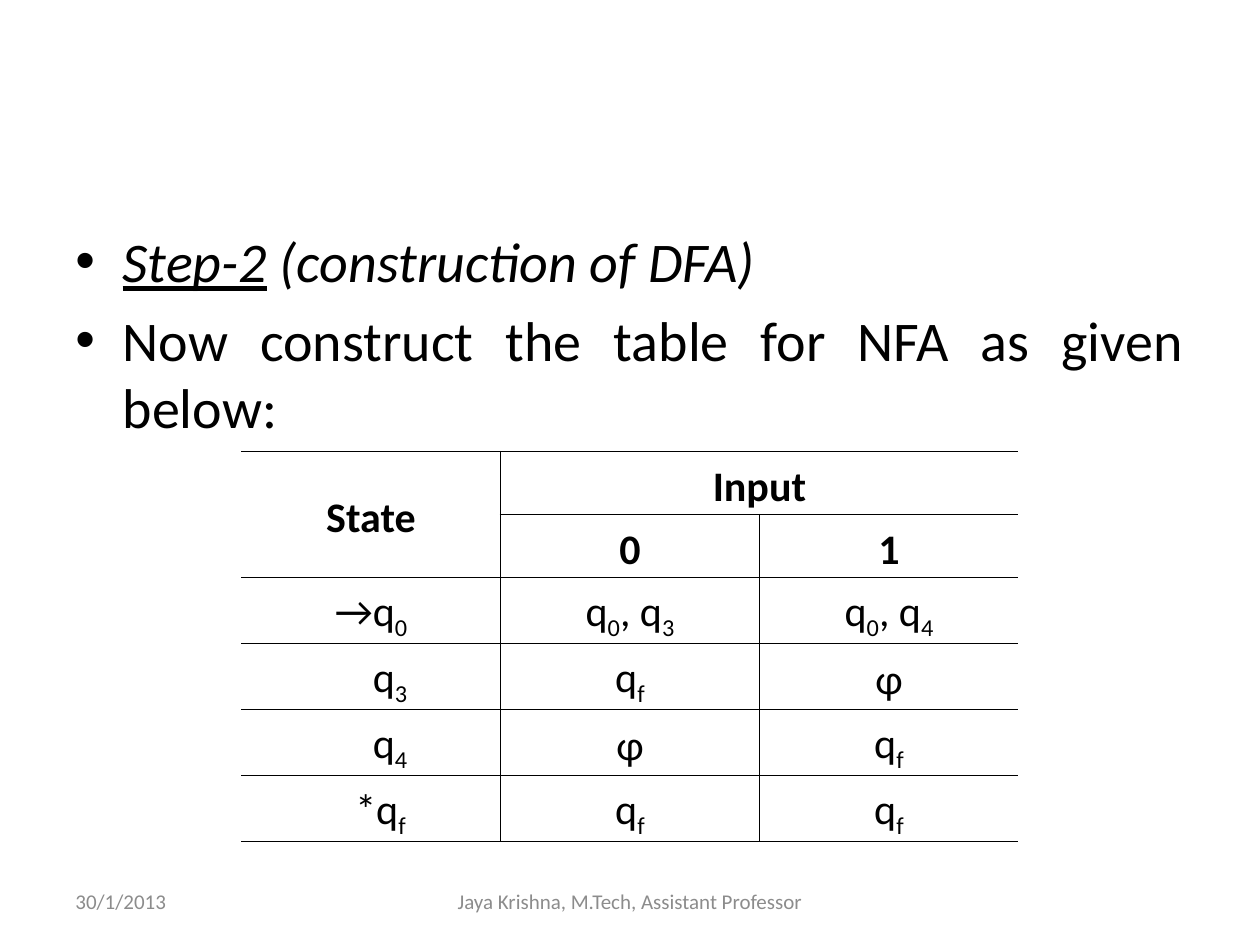
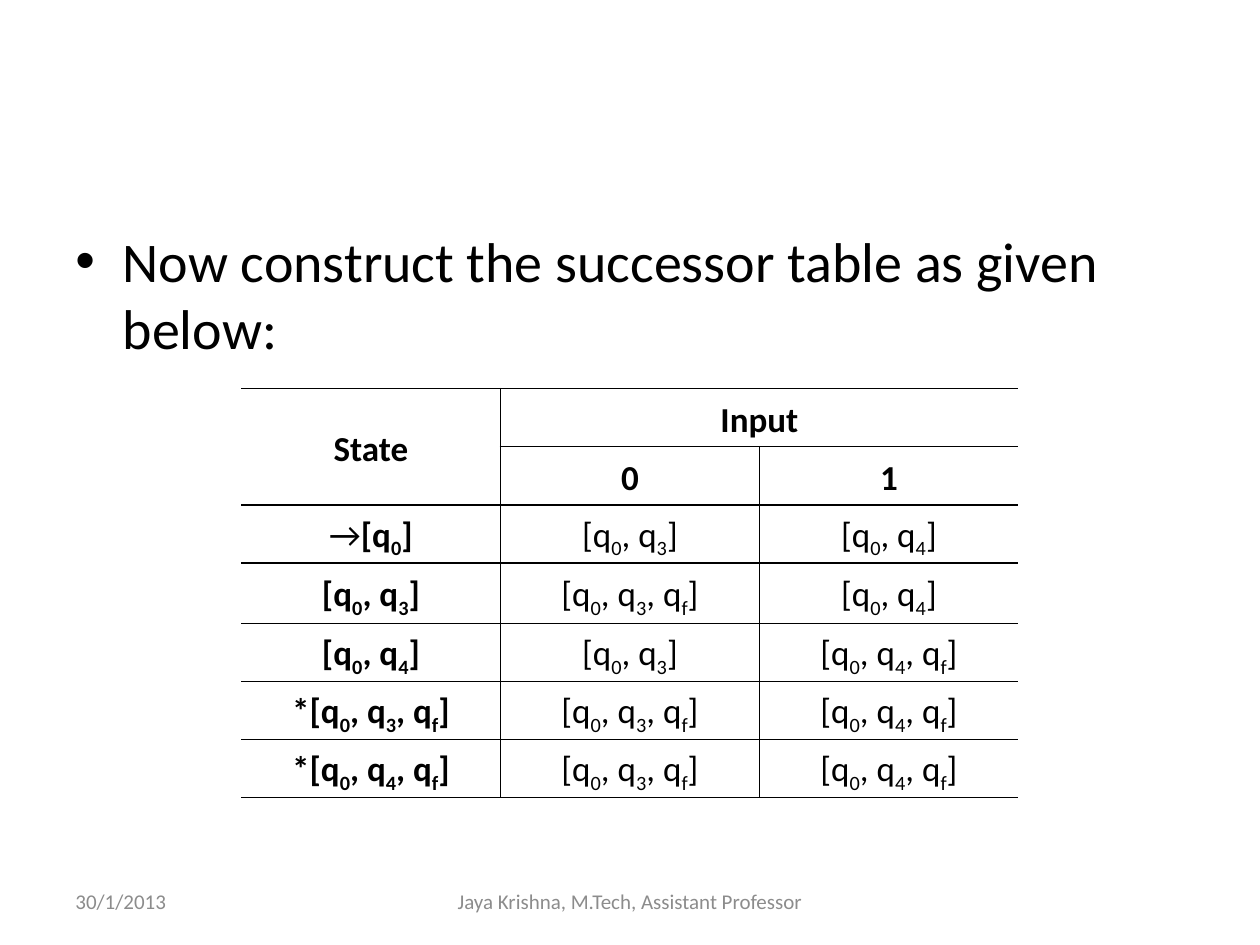
"""Build two slides showing an NFA table and its successor table."""
import dataclasses

import pptx
import pptx.dml.color
import pptx.enum.text
import pptx.oxml.ns
import pptx.util
from lxml import etree

Pt = pptx.util.Pt
ALIGN = pptx.enum.text.PP_ALIGN
MIDDLE = pptx.enum.text.MSO_ANCHOR.MIDDLE


@dataclasses.dataclass(frozen=True)
class Theme:
    font: str = "Calibri"
    ink: str = "000000"
    muted: str = "8C8C8C"
    body_size: float = 32
    footer_size: float = 12
    border: float = 1
    bullet_indent: float = 27


THEME = Theme()
SLIDE_SIZE = (720, 540)
BODY_LEFT, BODY_TOP, BODY_WIDTH = 36, 126, 648
TABLE_LEFT, COLUMN_WIDTH = 138, 148

FOOTERS = [
    ("30/1/2013", (36, 500.5, 168, 28.75), ALIGN.LEFT),
    ("Jaya Krishna, M.Tech, Assistant Professor", (246, 500.5, 228, 28.75), ALIGN.CENTER),
]
HEADER = [("State", "Input", ""), ("", "0", "1")]
SLIDES = [
    {
        "body_height": 131.75,
        "bullets": [
            (ALIGN.LEFT, [("Step-2", {"italic": True, "underline": True}),
                          (" (construction of DFA)", {"italic": True})]),
            (ALIGN.JUSTIFY, [("Now construct the table for NFA as given below:", {})]),
        ],
        "table_top": 258,
        "text_size": 24,
        "bold_states": False,
        "row_heights": [36] * 6,
        "state_indents": {3: 21.7, 4: 21.7, 5: 10.85},
        "rows": [
            ("→q_0", "q_0, q_3", "q_0, q_4"),
            ("q_3", "q_f", "φ"),
            ("q_4", "φ", "q_f"),
            ("*q_f", "q_f", "q_f"),
        ],
    },
    {
        "body_height": 77.75,
        "bullets": [
            (ALIGN.LEFT, [("Now construct the successor table as given below:", {})]),
        ],
        "table_top": 222,
        "text_size": 20,
        "bold_states": True,
        "row_heights": [33.25] * 3 + [34.5] + [33.25] * 3,
        "state_indents": {},
        "rows": [
            ("→[q_0]", "[q_0, q_3]", "[q_0, q_4]"),
            ("[q_0, q_3]", "[q_0, q_3, q_f]", "[q_0, q_4]"),
            ("[q_0, q_4]", "[q_0, q_3]", "[q_0, q_4, q_f]"),
            ("*[q_0, q_3, q_f]", "[q_0, q_3, q_f]", "[q_0, q_4, q_f]"),
            ("*[q_0, q_4, q_f]", "[q_0, q_3, q_f]", "[q_0, q_4, q_f]"),
        ],
    },
]


def add_run(paragraph, text, size, color=THEME.ink, bold=False, italic=False,
            underline=False, subscript=False):
    run = paragraph.add_run()
    run.text = text
    font = run.font
    font.name, font.size = THEME.font, Pt(size)
    font.bold, font.italic, font.underline = bold, italic, underline
    font.color.rgb = pptx.dml.color.RGBColor.from_string(color)
    if subscript:
        run._r.get_or_add_rPr().set("baseline", "-25000")


def add_state_runs(paragraph, text, size, bold):
    if text.startswith("→"):
        add_run(paragraph, "→", size)
        text = text[1:]
    first, *subscripted = text.split("_")
    add_run(paragraph, first, size, bold=bold)
    for part in subscripted:
        add_run(paragraph, part[0], size, bold=bold, subscript=True)
        if part[1:]:
            add_run(paragraph, part[1:], size, bold=bold)


def add_text_box(slide, box):
    frame = slide.shapes.add_textbox(*map(Pt, box)).text_frame
    frame.word_wrap = True
    return frame


def add_bullets(slide, content):
    frame = add_text_box(slide, (BODY_LEFT, BODY_TOP, BODY_WIDTH, content["body_height"]))
    for index, (alignment, runs) in enumerate(content["bullets"]):
        paragraph = frame.add_paragraph() if index else frame.paragraphs[0]
        paragraph.alignment = alignment
        paragraph.space_before = Pt(THEME.body_size * 0.2)
        properties = paragraph._p.get_or_add_pPr()
        properties.set("marL", str(Pt(THEME.bullet_indent)))
        properties.set("indent", str(-Pt(THEME.bullet_indent)))
        bullet_font = etree.SubElement(properties, pptx.oxml.ns.qn("a:buFont"))
        bullet_font.set("typeface", "Arial")
        etree.SubElement(properties, pptx.oxml.ns.qn("a:buChar")).set("char", "•")
        for text, style in runs:
            add_run(paragraph, text, THEME.body_size, **style)


def add_footers(slide):
    for text, box, alignment in FOOTERS:
        frame = add_text_box(slide, box)
        frame.vertical_anchor = MIDDLE
        frame.paragraphs[0].alignment = alignment
        add_run(frame.paragraphs[0], text, THEME.footer_size, THEME.muted)


def has_vertical_line(row, boundary):
    return boundary == 1 or (boundary == 2 and row > 0)


def has_horizontal_line(boundary, column):
    return boundary != 1 or column > 0


def set_borders(cell, row, column):
    properties = cell._tc.get_or_add_tcPr()
    sides = {
        "a:lnL": has_vertical_line(row, column),
        "a:lnR": has_vertical_line(row, column + 1),
        "a:lnT": has_horizontal_line(row, column),
        "a:lnB": has_horizontal_line(row + 1, column),
    }
    for tag, visible in sides.items():
        line = etree.SubElement(properties, pptx.oxml.ns.qn(tag))
        line.set("w", str(Pt(THEME.border)))
        fill = etree.SubElement(line, pptx.oxml.ns.qn("a:solidFill" if visible else "a:noFill"))
        if visible:
            etree.SubElement(fill, pptx.oxml.ns.qn("a:srgbClr")).set("val", THEME.ink)


def add_state_table(slide, content):
    rows = HEADER + content["rows"]
    heights = content["row_heights"]
    table = slide.shapes.add_table(
        len(rows), 3, Pt(TABLE_LEFT), Pt(content["table_top"]),
        Pt(3 * COLUMN_WIDTH), Pt(sum(heights))).table
    table.first_row = table.horz_banding = False
    for column in table.columns:
        column.width = Pt(COLUMN_WIDTH)
    for row, height in zip(table.rows, heights):
        row.height = Pt(height)
    table.cell(0, 0).merge(table.cell(1, 0))
    table.cell(0, 1).merge(table.cell(0, 2))
    for row, texts in enumerate(rows):
        for column, text in enumerate(texts):
            cell = table.cell(row, column)
            set_borders(cell, row, column)
            cell.fill.background()
            cell.vertical_anchor = MIDDLE
            cell.margin_left = cell.margin_right = Pt(5)
            cell.margin_top = cell.margin_bottom = 0
            if not text:
                continue
            paragraph = cell.text_frame.paragraphs[0]
            paragraph.alignment = ALIGN.CENTER
            paragraph.line_spacing = 1.15
            if column == 0 and row in content["state_indents"]:
                indent = Pt(content["state_indents"][row])
                paragraph._p.get_or_add_pPr().set("marL", str(indent))
            bold = row < len(HEADER) or (column == 0 and content["bold_states"])
            add_state_runs(paragraph, text, content["text_size"], bold)


def main():
    presentation = pptx.Presentation()
    presentation.slide_width, presentation.slide_height = map(Pt, SLIDE_SIZE)
    for content in SLIDES:
        slide = presentation.slides.add_slide(presentation.slide_layouts[6])
        add_bullets(slide, content)
        add_footers(slide)
        add_state_table(slide, content)
    presentation.save("out.pptx")


if __name__ == "__main__":
    main()
